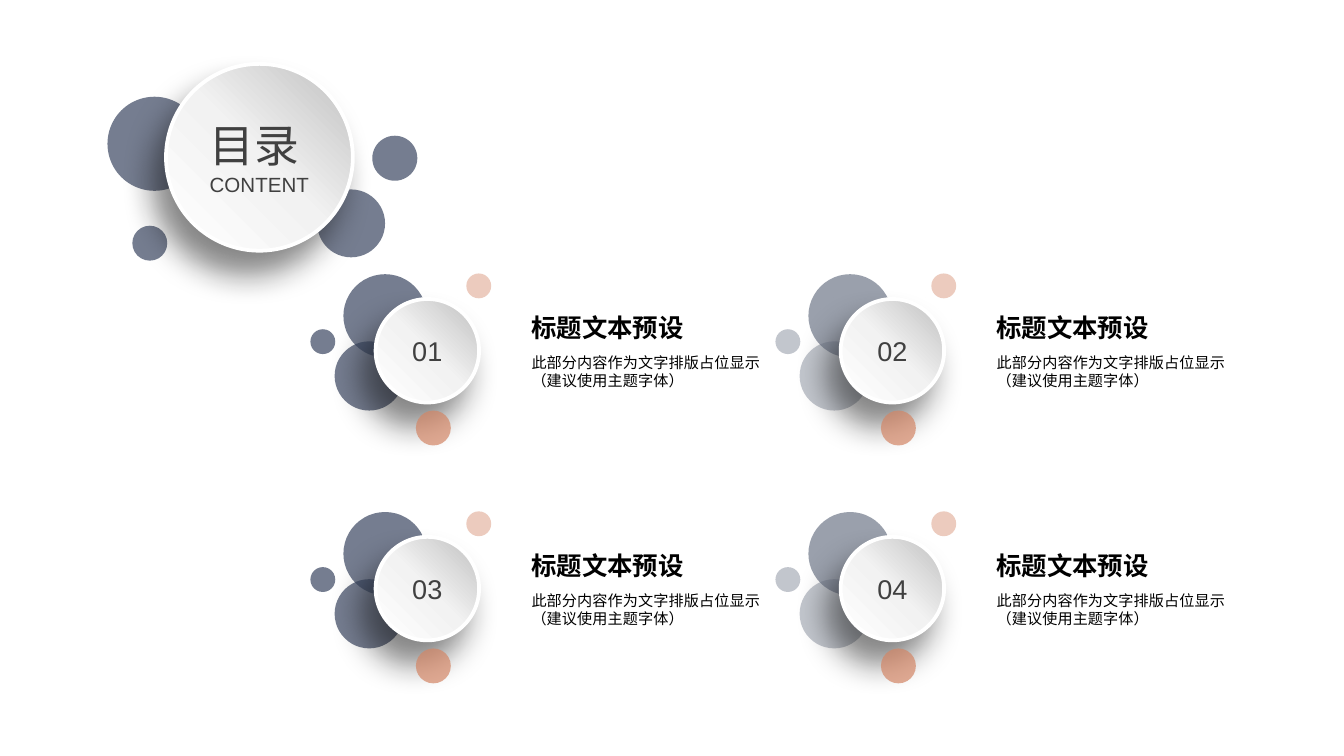
from copy import deepcopy

from lxml import etree
from pptx import Presentation
from pptx.dml.color import RGBColor
from pptx.enum.shapes import MSO_SHAPE
from pptx.enum.text import MSO_ANCHOR, MSO_AUTO_SIZE, PP_ALIGN
from pptx.oxml.ns import qn
from pptx.util import Emu, Pt

ELLIPSE = MSO_SHAPE.OVAL
LEFT, CENTER = PP_ALIGN.LEFT, PP_ALIGN.CENTER
MIDDLE, BOTTOM = MSO_ANCHOR.MIDDLE, MSO_ANCHOR.BOTTOM
NO_AUTOFIT = MSO_AUTO_SIZE.NONE

PX = 4572  # 200 px to the inch
FONT = "Arial"
COLORS = {
    "navy": "3B4761", "slate": "70788A", "mist": "A9AEB9",
    "copper": "D38666", "blush": "E5B6A3", "white": "FFFFFF",
    "silver": "BFBFBF", "pearl": "F2F2F2",
    "shadow": "0D0D0D", "gray": "404040", "black": "000000",
}
TITLE_ONLY_LAYOUT = 5

COLUMN_LEFTS = (462, 1154)
ROW_TOPS = (407, 761)
COLUMN_TINTS = (("navy", "navy"), ("slate", "mist"))
HEADING = "标题文本预设"
DESCRIPTION = "此部分内容作为文字排版占位显示\v（建议使用主题字体）"


def px(value):
    return Emu(value * PX)


def rgb(name):
    return RGBColor.from_string(COLORS[name])


def set_alpha(color_element, percent):
    etree.SubElement(color_element, qn("a:alpha"), val=str(percent * 1000))


def add_circle(shapes, left, top, size):
    circle = shapes.add_shape(ELLIPSE, px(left), px(top), px(size), px(size))
    circle.shadow.inherit = False
    return circle


def add_bubble(shapes, left, top, size, color):
    """Add a flat circle at 70 % opacity."""
    bubble = add_circle(shapes, left, top, size)
    bubble.fill.solid()
    bubble.fill.fore_color.rgb = rgb(color)
    set_alpha(bubble._element.spPr.find(qn("a:solidFill")).find(qn("a:srgbClr")), 70)
    bubble.line.fill.background()


def add_disc(shapes, left, top, size):
    """Add a raised white-rimmed circle with a gradient and a soft shadow."""
    disc = add_circle(shapes, left, top, size)
    disc.fill.gradient()
    disc.fill.gradient_angle = 225
    stop_list = disc._element.spPr.find(qn("a:gradFill")).find(qn("a:gsLst"))
    stop_list.append(deepcopy(stop_list[-1]))
    stops = zip(disc.fill.gradient_stops, (0, 0.5, 1), ("silver", "pearl", "white"))
    for stop, position, color in stops:
        stop.position = position
        stop.color.rgb = rgb(color)
    disc.line.color.rgb = rgb("white")
    disc.line.width = Pt(2)

    effects = disc._element.spPr.find(qn("a:effectLst"))
    shadow = etree.SubElement(
        effects, qn("a:outerShdw"), blurRad=str(Pt(17)), dist=str(Pt(14)),
        dir=str(120 * 60000), algn="ctr", rotWithShape="0")
    set_alpha(etree.SubElement(shadow, qn("a:srgbClr"), val=COLORS["shadow"]), 50)
    return disc


def write_text(shape, text, size, color, align=LEFT, anchor=MIDDLE, inset=0, bold=False):
    frame = shape.text_frame
    frame.text = text
    frame.word_wrap = True
    frame.auto_size = NO_AUTOFIT
    frame.vertical_anchor = anchor
    frame.margin_left = px(inset)
    frame.margin_top = frame.margin_right = frame.margin_bottom = 0
    paragraph = frame.paragraphs[0]
    paragraph.alignment = align
    for run in paragraph.runs:
        run.font.name = FONT
        run.font.size = Pt(size)
        run.font.bold = bold
        run.font.color.rgb = rgb(color)


def add_label(shapes, left, top, height, text, size, **style):
    box = shapes.add_textbox(px(left), px(top), px(430), px(height))
    write_text(box, text, size, "black", inset=78, **style)


def add_entry(slide, left, top, number, large_tint, small_tint):
    """Add one numbered contents entry: bubbles, disc, heading and description."""
    shapes = slide.shapes.add_group_shape().shapes
    add_bubble(shapes, left + 36, top + 101, 103, small_tint)
    add_bubble(shapes, left + 49, top + 1, 124, large_tint)
    disc = add_disc(shapes, left + 97, top + 38, 154)
    write_text(disc, f"{number:02d}", 14.5, "gray", align=CENTER)
    add_bubble(shapes, left + 157, top + 204, 52, "copper")
    add_bubble(shapes, left, top + 83, 37, small_tint)
    add_bubble(shapes, left + 232, top, 37, "blush")
    add_label(shapes, left + 251, top + 63, 40, HEADING, 13.6, anchor=BOTTOM, bold=True)
    add_label(shapes, left + 251, top + 104, 84, DESCRIPTION, 8.1)


def add_title(slide):
    shapes = slide.shapes.add_group_shape().shapes
    for left, top, size in ((197, 336, 52), (472, 282, 101), (160, 144, 140)):
        add_bubble(shapes, left, top, size, "navy")
    disc_box = (247, 95, 278)
    add_disc(shapes, *disc_box)
    add_bubble(shapes, 554, 202, 67, "navy")

    title = slide.shapes.title
    left, top, size = map(px, disc_box)
    title.left, title.top, title.width, title.height = left, top, size, size
    write_text(title, "目录 \vCONTENT", 24, "gray", align=CENTER)
    title.text_frame.paragraphs[0].runs[1].font.size = Pt(11)
    slide.shapes._spTree.append(title._element)  # in front of the disc


def main():
    presentation = Presentation()
    presentation.slide_width, presentation.slide_height = px(2000), px(1125)
    slide = presentation.slides.add_slide(presentation.slide_layouts[TITLE_ONLY_LAYOUT])
    for column, (left, tints) in enumerate(zip(COLUMN_LEFTS, COLUMN_TINTS)):
        for row, top in enumerate(ROW_TOPS):
            add_entry(slide, left, top, 2 * row + column + 1, *tints)
    add_title(slide)
    presentation.save("out.pptx")


if __name__ == "__main__":
    main()
